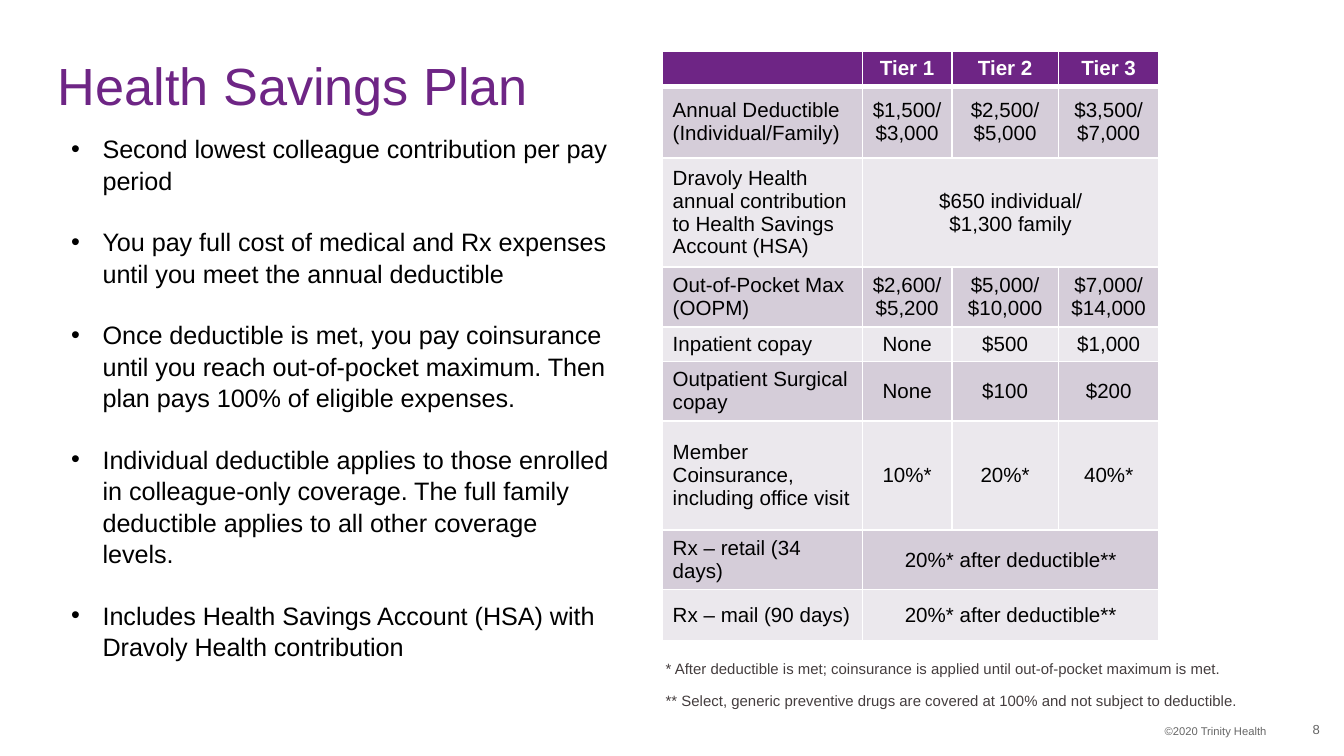
import pptx
import pptx.dml.color
import pptx.enum.text
import pptx.oxml
import pptx.oxml.ns
import pptx.util

Pt = pptx.util.Pt
RGBColor = pptx.dml.color.RGBColor
ALIGN = pptx.enum.text.PP_ALIGN
MIDDLE = pptx.enum.text.MSO_ANCHOR.MIDDLE
SubElement = pptx.oxml.ns.qn

PURPLE = RGBColor(0x6E, 0x25, 0x85)
BAND_DARK = RGBColor(0xD5, 0xCD, 0xD9)
BAND_LIGHT = RGBColor(0xEB, 0xE8, 0xED)
WHITE = RGBColor(0xFF, 0xFF, 0xFF)
BLACK = RGBColor(0, 0, 0)
FOOTER_GRAY = RGBColor(0x66, 0x66, 0x66)
NOTE_GRAY = RGBColor(0x44, 0x3D, 0x3E)
XMLNS = 'xmlns:a="http://schemas.openxmlformats.org/drawingml/2006/main"'


def add_run(paragraph, text, size, color, bold=False):
    run = paragraph.add_run()
    run.text = text
    run.font.name = "Arial"
    run.font.size = Pt(size)
    run.font.color.rgb = color
    run.font.bold = bold


def add_frame(left, top, width, height, wrap=True):
    frame = slide.shapes.add_textbox(Pt(left), Pt(top), Pt(width), Pt(height)).text_frame
    frame.word_wrap = wrap
    return frame


deck = pptx.Presentation()
deck.slide_width, deck.slide_height = Pt(720), Pt(405)
slide = deck.slides.add_slide(deck.slide_layouts[5])

# Title
title = slide.shapes.title
title.left, title.top, title.width, title.height = Pt(31), Pt(27.5), Pt(648), Pt(39.5)
heading = title.text_frame
heading.margin_left = heading.margin_right = heading.margin_top = heading.margin_bottom = 0
heading.vertical_anchor = MIDDLE
heading.paragraphs[0].alignment = ALIGN.LEFT
heading.paragraphs[0].line_spacing = 0.9
add_run(heading.paragraphs[0], "Health Savings Plan", 28, PURPLE)

# Plan highlights
highlights = [
    "Second lowest colleague contribution per pay period",
    "You pay full cost of medical and Rx expenses until you meet the annual deductible",
    "Once deductible is met, you pay coinsurance until you reach out-of-pocket maximum. "
    "Then plan pays 100% of eligible expenses.",
    "Individual deductible applies to those enrolled in colleague-only coverage. "
    "The full family deductible applies to all other coverage levels.",
    "Includes Health Savings Account (HSA) with Dravoly Health contribution",
]
highlight_frame = add_frame(31, 67.5, 305, 285)
for index, highlight in enumerate(highlights):
    point = highlight_frame.add_paragraph() if index else highlight_frame.paragraphs[0]
    point.line_spacing = 1.04
    if index:
        point.space_before = Pt(16.2)
    properties = point._p.get_or_add_pPr()
    properties.set("marL", str(Pt(16.9)))
    properties.set("indent", str(-Pt(16.9)))
    properties.append(pptx.oxml.parse_xml(f'<a:buFont {XMLNS} typeface="Arial"/>'))
    properties.append(pptx.oxml.parse_xml(f'<a:buChar {XMLNS} char="•"/>'))
    add_run(point, highlight, 13.5, BLACK)

# Benefits by tier: a row with one value spans all tiers
benefits = [
    ["", "Tier 1", "Tier 2", "Tier 3"],
    ["Annual Deductible (Individual/Family)",
     "$1,500/\n$3,000", "$2,500/\n$5,000", "$3,500/ $7,000"],
    ["Dravoly Health annual contribution to Health Savings Account (HSA)",
     "$650 individual/\n$1,300 family"],
    ["Out-of-Pocket Max (OOPM)", "$2,600/ $5,200", "$5,000/ $10,000", "$7,000/ $14,000"],
    ["Inpatient copay", "None", "$500", "$1,000"],
    ["Outpatient Surgical copay", "None", "$100", "$200"],
    ["Member Coinsurance, including office visit", "10%*", "20%*", "40%*"],
    ["Rx – retail (34 days)", "20%* after deductible**"],
    ["Rx – mail (90 days)", "20%* after deductible**"],
]
column_widths = [107, 48, 57, 54]
row_heights = [18, 38.5, 58.5, 32, 18.5, 31.5, 58.5, 31.5, 27.5]
benefit_table = slide.shapes.add_table(
    len(row_heights), len(column_widths), Pt(355), Pt(27.5),
    Pt(sum(column_widths)), Pt(sum(row_heights))).table
for column, width in zip(benefit_table.columns, column_widths):
    column.width = Pt(width)
for row, height in zip(benefit_table.rows, row_heights):
    row.height = Pt(height)

for r, values in enumerate(benefits):
    is_header = r == 0
    band = PURPLE if is_header else BAND_DARK if r % 2 else BAND_LIGHT
    if len(values) == 2:
        benefit_table.cell(r, 1).merge(benefit_table.cell(r, 3))
    for c in range(len(column_widths)):
        cell = benefit_table.cell(r, c)
        cell.fill.solid()
        cell.fill.fore_color.rgb = band
        cell.vertical_anchor = MIDDLE
        cell.margin_left = cell.margin_right = Pt(5.4)
        cell.margin_top = cell.margin_bottom = Pt(2.7)
        # White cell borders, heavier around the header's lower edge
        for position, side in enumerate("LRTB"):
            heavy = (is_header and side == "B") or (r == 1 and side == "T")
            cell._tc.tcPr.insert(position, pptx.oxml.parse_xml(
                f'<a:ln{side} {XMLNS} w="{Pt(3 if heavy else 1)}"><a:solidFill>'
                f'<a:srgbClr val="{WHITE}"/></a:solidFill></a:ln{side}>'))
        if c >= len(values):
            continue
        for n, line in enumerate(values[c].split("\n")):
            entry = cell.text_frame.add_paragraph() if n else cell.text_frame.paragraphs[0]
            entry.alignment = ALIGN.CENTER if c else ALIGN.LEFT
            if line:
                add_run(entry, line, 11, WHITE if is_header else BLACK, is_header)
            else:
                entry._p.append(pptx.oxml.parse_xml(f'<a:endParaRPr {XMLNS} sz="1100"/>'))

# Footnotes
footnotes = [
    ("* After deductible is met; coinsurance is applied until out-of-pocket maximum is met.",
     338.5, 336, True),
    ("** Select, generic preventive drugs are covered at 100% and not subject to deductible.",
     355.5, 322.5, False),
]
for footnote, top, width, wrap in footnotes:
    note = add_frame(349.5, top, width, 25, wrap).paragraphs[0]
    note.line_spacing = Pt(21)
    note.space_after = Pt(6)
    add_run(note, footnote, 8, NOTE_GRAY)

# Copyright line and page number
copyright_line = add_frame(384, 384.5, 301.5, 14.5).paragraphs[0]
copyright_line.alignment = ALIGN.RIGHT
add_run(copyright_line, "©2020 Trinity Health", 6, FOOTER_GRAY)

page_frame = add_frame(675.5, 380, 31.5, 21.5)
page_frame.margin_right = 0
page_frame.vertical_anchor = MIDDLE
page_frame.paragraphs[0].alignment = ALIGN.RIGHT
add_run(page_frame.paragraphs[0], "8", 7, FOOTER_GRAY)

deck.save("out.pptx")
